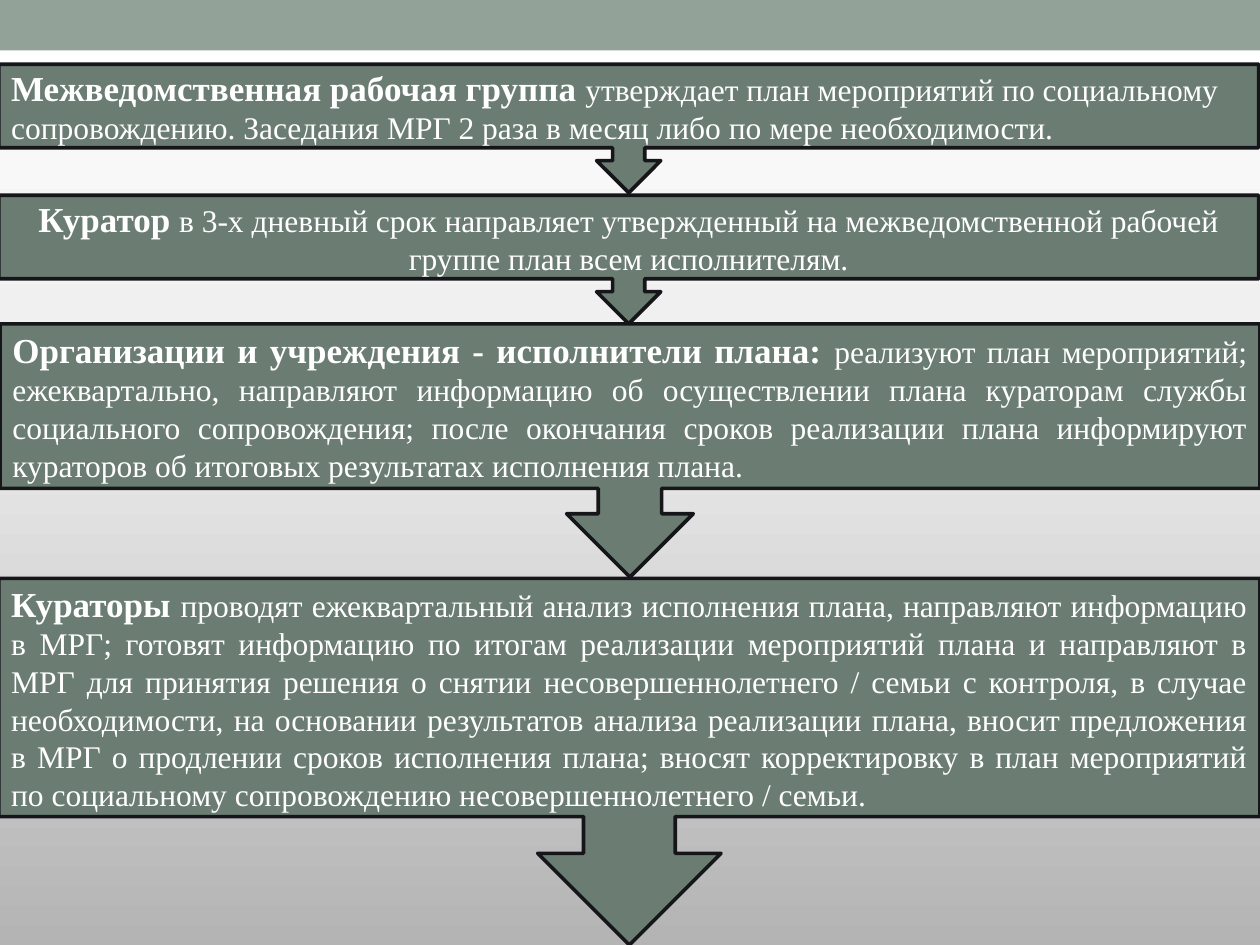
from copy import deepcopy

from pptx import Presentation
from pptx.dml.color import RGBColor
from pptx.enum.shapes import MSO_SHAPE
from pptx.enum.text import MSO_ANCHOR, PP_ALIGN
from pptx.oxml.ns import qn
from pptx.util import Inches, Pt

FONT = "Times New Roman"
GRADIENT = [(0, "FFFFFF"), (0.4, "EEEEEE"), (1, "B4B4B4")]
BANDS = [(0.24, 0.25, "FFFFFF"), (0, 0.4, "93A299")]
STEPS = [
    (-0.01, 0.51, 10, 1.02, PP_ALIGN.LEFT, "Межведомственная рабочая группа ",
     "утверждает план мероприятий по социальному сопровождению. "
     "Заседания МРГ 2 раза в месяц либо по мере необходимости."),
    (-0.01, 1.55, 10, 1.02, PP_ALIGN.CENTER, "Куратор ",
     "в 3-х дневный срок направляет утвержденный на межведомственной "
     "рабочей группе план всем исполнителям."),
    (0, 2.57, 10, 2.01, PP_ALIGN.JUSTIFY,
     "Организации и учреждения - исполнители плана: ",
     "реализуют план мероприятий; ежеквартально, направляют информацию об "
     "осуществлении плана кураторам службы социального сопровождения; после "
     "окончания сроков реализации плана информируют кураторов об итоговых "
     "результатах исполнения плана."),
    (-0.01, 4.59, 10.01, 2.91, PP_ALIGN.JUSTIFY, "Кураторы ",
     "проводят ежеквартальный анализ исполнения плана, направляют информацию "
     "в МРГ; готовят информацию по итогам реализации мероприятий плана и "
     "направляют в МРГ для принятия решения о снятии несовершеннолетнего / "
     "семьи с контроля, в случае необходимости, на основании результатов "
     "анализа реализации плана, вносит предложения в МРГ о продлении сроков "
     "исполнения плана; вносят корректировку в план мероприятий по "
     "социальному сопровождению несовершеннолетнего / семьи."),
]


def rgb(color):
    return RGBColor.from_string(color)


def set_background(s):
    fill = s.background.fill
    fill.gradient()
    fill.gradient_angle = 270
    stops = s.element.find(".//" + qn("a:gsLst"))
    stops.append(deepcopy(stops[-1]))
    for stop, (position, color) in zip(fill.gradient_stops, GRADIENT):
        stop.position = position
        stop.color.rgb = rgb(color)


def add_filled(s, kind, box, color):
    sp = s.shapes.add_shape(kind, *map(Inches, box))
    sp.shadow.inherit = False
    sp.fill.solid()
    sp.fill.fore_color.rgb = rgb(color)
    return sp


def add_band(s, top, height, color):
    sp = add_filled(s, MSO_SHAPE.RECTANGLE, (0, top, 10, height), color)
    sp.line.fill.background()


def add_step(s, left, top, width, height, align, actor, action):
    sp = add_filled(s, MSO_SHAPE.DOWN_ARROW_CALLOUT,
                    (left, top, width, height), "6B7D72")
    sp.line.color.rgb = rgb("15151A")
    sp.line.width = Pt(2.08)
    tf = sp.text_frame
    tf.word_wrap = True
    tf.vertical_anchor = MSO_ANCHOR.MIDDLE
    p = tf.paragraphs[0]
    p.alignment = align
    for text, size, bold in [(actor, 20, True), (action, 18, False)]:
        r = p.add_run()
        r.text = text
        r.font.name = FONT
        r.font.size = Pt(size)
        r.font.bold = bold
        r.font.color.rgb = rgb("FFFFFF")


def main():
    prs = Presentation()
    prs.slide_width, prs.slide_height = Inches(10), Inches(7.5)
    s = prs.slides.add_slide(prs.slide_layouts[6])
    set_background(s)
    for band in BANDS:
        add_band(s, *band)
    for step in STEPS:
        add_step(s, *step)
    prs.save("out.pptx")


if __name__ == "__main__":
    main()
